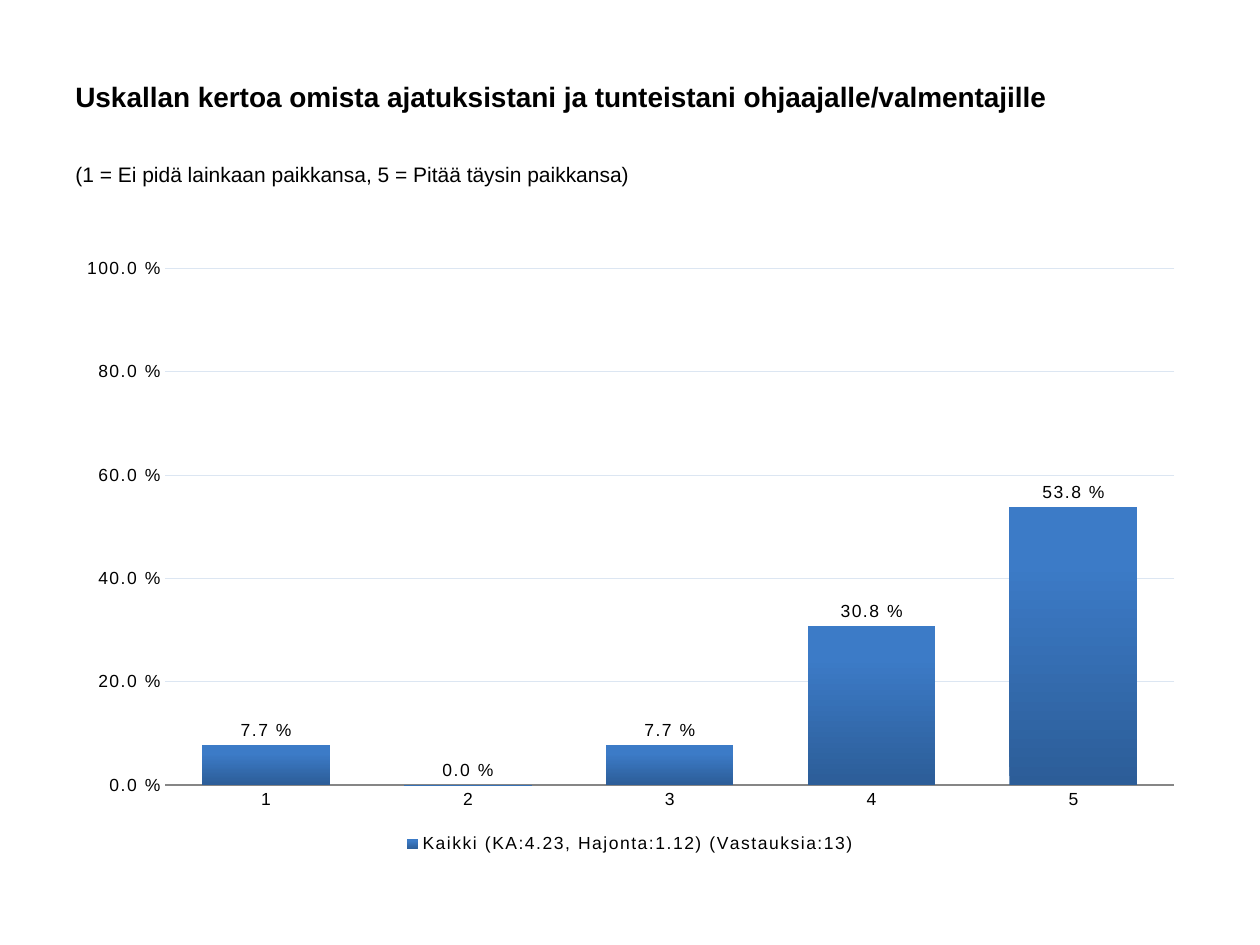
from pptx import Presentation
from pptx import util as u
from pptx.chart.data import CategoryChartData
from pptx.dml.color import RGBColor
from pptx.enum import chart as ch, text
from pptx.oxml import parse_xml
from pptx.oxml.ns import nsdecls

PX = 914400 // 126
FONT = "Arial"
BLACK = RGBColor(0, 0, 0)
GRID = RGBColor(0xDC, 0xE6, 0xF2)
AXIS = RGBColor(0x86, 0x86, 0x86)
BAR_TOP = RGBColor(0x3C, 0x7B, 0xC7)
BAR_BOTTOM = RGBColor(0x2C, 0x5D, 0x98)
PERCENT = "0.0\\ %"


def px(*lengths):
    return [u.Emu(n * PX) for n in lengths]


def style_font(font, size, bold=False):
    font.name = FONT
    font.size = u.Pt(size)
    font.bold = bold
    font.color.rgb = BLACK


def add_text(slide, box, words, size, bold=False, anchor=text.MSO_ANCHOR.TOP, before=0):
    tf = slide.shapes.add_textbox(*px(*box)).text_frame
    tf.word_wrap = True
    tf.vertical_anchor = anchor
    p = tf.paragraphs[0]
    p.text = words
    p.space_before = u.Pt(before)
    style_font(p.font, size, bold)


def set_plot_area(chart, x, y, w, h):
    """Fix the inner plot area, as fractions of the chart."""
    plot_area = chart.plots[0]._element.getparent()
    for old in plot_area.findall("{*}layout"):
        plot_area.remove(old)
    plot_area.insert(0, parse_xml(
        f'<c:layout {nsdecls("c")}><c:manualLayout><c:layoutTarget val="inner"/>'
        '<c:xMode val="edge"/><c:yMode val="edge"/>'
        f'<c:x val="{x}"/><c:y val="{y}"/><c:w val="{w}"/><c:h val="{h}"/>'
        '</c:manualLayout></c:layout>'))


def style_axes(chart):
    cat, val = chart.category_axis, chart.value_axis
    for axis in (cat, val):
        axis.major_tick_mark = axis.minor_tick_mark = ch.XL_TICK_MARK.NONE
        style_font(axis.tick_labels.font, 10)
    cat.format.line.color.rgb = AXIS
    cat.format.line.width = u.Pt(0.75)
    val.minimum_scale, val.maximum_scale, val.major_unit = 0, 1, 0.2
    val.tick_labels.number_format = PERCENT
    val.tick_labels.number_format_is_linked = False
    val.format.line.fill.background()
    grid = val.major_gridlines.format.line
    grid.color.rgb = GRID
    grid.width = u.Pt(0.75)


def style_bars(plot):
    plot.gap_width = 58
    plot.vary_by_categories = False
    series = plot.series[0]
    fill = series.format.fill
    fill.gradient()
    fill.gradient_angle = 90
    for stop, color, position in zip(fill.gradient_stops, (BAR_BOTTOM, BAR_TOP), (0, 0.8)):
        stop.color.rgb = color
        stop.position = position
    labels = series.data_labels
    labels.show_value = True
    labels.number_format = PERCENT
    labels.number_format_is_linked = False
    labels.position = ch.XL_LABEL_POSITION.OUTSIDE_END
    style_font(labels.font, 10)


def add_bar_chart(slide, box, name, categories, values):
    data = CategoryChartData(number_format=PERCENT)
    data.categories = categories
    data.add_series(name, values)
    kind = ch.XL_CHART_TYPE.COLUMN_CLUSTERED
    chart = slide.shapes.add_chart(kind, *px(*box), data).chart
    chart.has_title = False
    chart.has_legend = True
    chart.legend.position = ch.XL_LEGEND_POSITION.BOTTOM
    chart.legend.include_in_layout = False
    style_font(chart.legend.font, 10)
    style_font(chart.font, 10)
    style_axes(chart)
    style_bars(chart.plots[0])
    set_plot_area(chart, 0.09, 0.04, 0.89, 0.84)
    # Widely spaced letters in every chart text
    for props in chart._chartSpace.iter("{*}defRPr"):
        props.set("spc", "100")


def main():
    prs = Presentation()
    prs.slide_width, prs.slide_height = px(1260, 945)
    slide = prs.slides.add_slide(prs.slide_layouts[6])

    # Statement and answer scale
    add_text(slide, (63, 46, 1134, 100),
             "Uskallan kertoa omista ajatuksistani ja tunteistani ohjaajalle/valmentajille",
             16, bold=True, anchor=text.MSO_ANCHOR.MIDDLE)
    add_text(slide, (63, 155, 1134, 74),
             "(1 = Ei pidä lainkaan paikkansa, 5 = Pitää täysin paikkansa)", 12, before=2.4)

    # Share of answers
    add_bar_chart(slide, (63, 244, 1134, 615),
                  "Kaikki (KA:4.23, Hajonta:1.12) (Vastauksia:13)",
                  ["1", "2", "3", "4", "5"], [0.077, 0, 0.077, 0.308, 0.538])

    prs.save("out.pptx")


if __name__ == "__main__":
    main()
